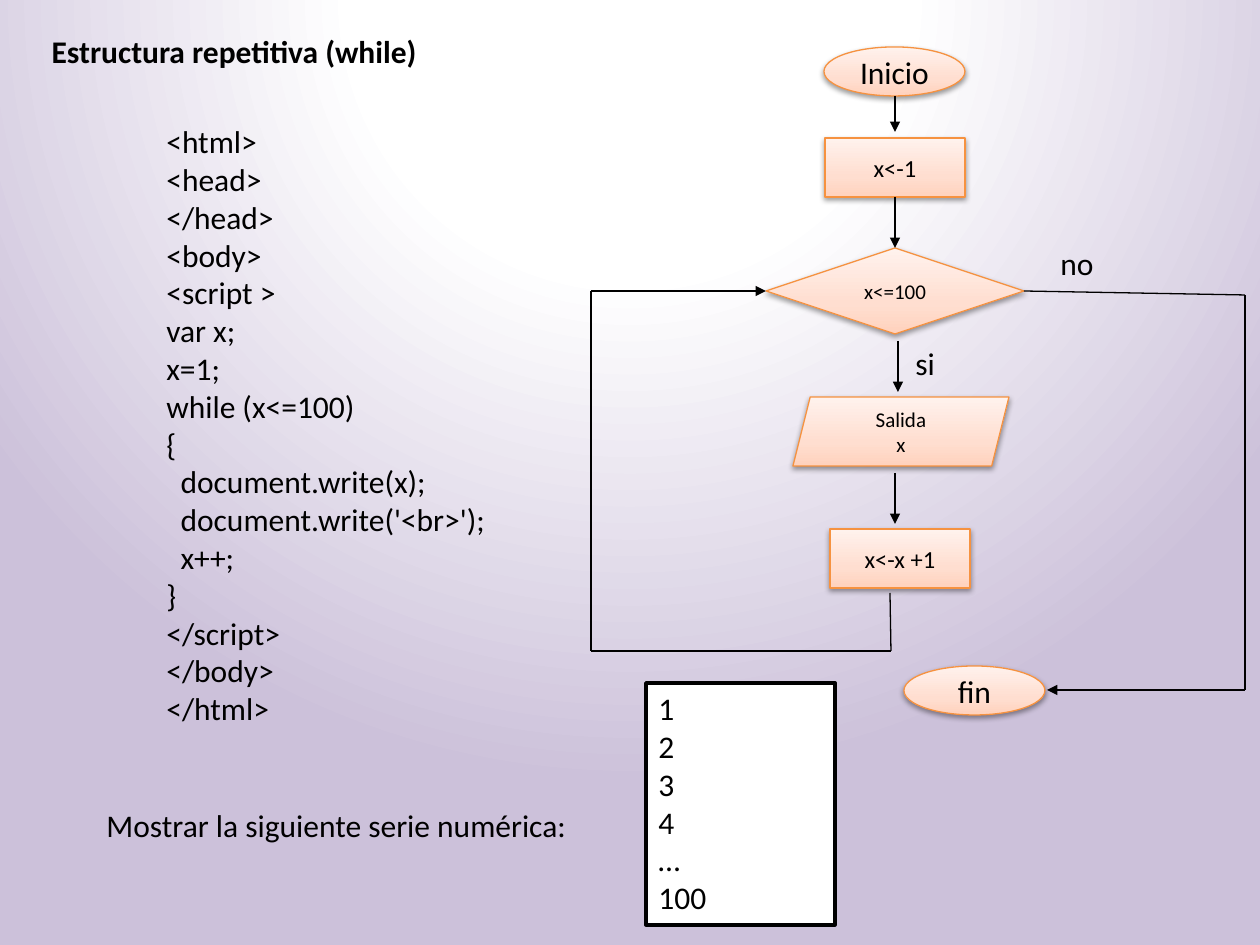
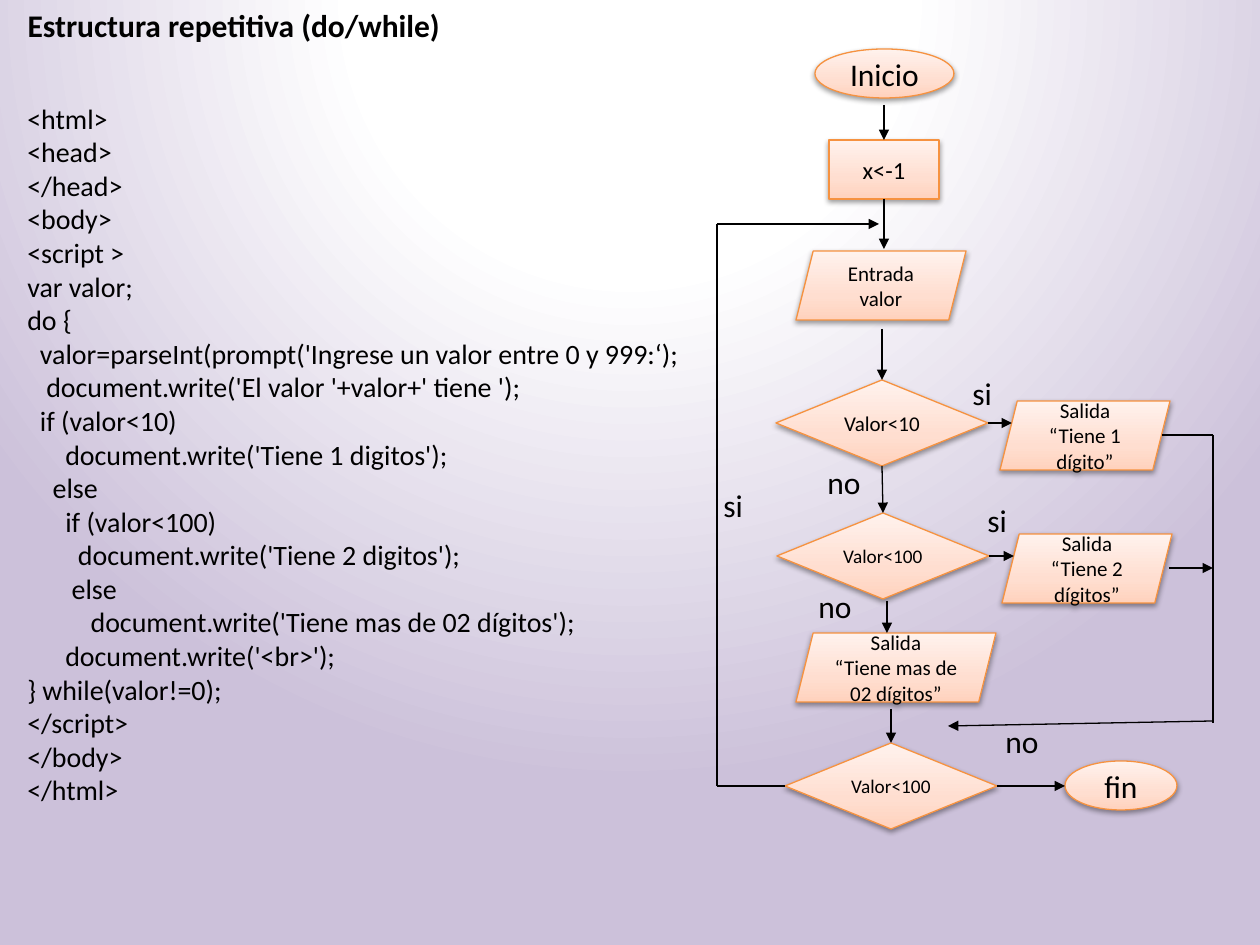
"""Build two slides that pair loop code with its flowchart."""
from pptx import Presentation
from pptx import util as u
from pptx.dml.color import RGBColor
from pptx.enum import shapes, text
from pptx.oxml import parse_xml
from pptx.oxml.ns import nsdecls, qn

SCALE = 914400 / 126
FONT = "Calibri"
BLACK, WHITE, ORANGE = "000000", "FFFFFF", "F69240"
PAGE_STOPS = [(0, WHITE), (35, WHITE), (100, "CCC1DA")]
NODE_STOPS = [(0, "FFD2BD"), (35, "FFDED0"), (100, "FFF2ED")]
PAGE_PATH = '<a:path path="circle"><a:fillToRect l="50000" t="-80000" r="50000" b="180000"/></a:path>'
NODE_ANGLE = '<a:lin ang="16200000" scaled="0"/>'
SPACE_WIDTH = 0.226
LABEL_WIDTHS = {"si": 52, "no": 72}
LABEL_HEIGHT = 50
TOP, LEFT, BOTTOM, RIGHT = range(4)

KINDS = {
    "terminal": shapes.MSO_SHAPE.OVAL,
    "process": shapes.MSO_SHAPE.RECTANGLE,
    "decision": shapes.MSO_SHAPE.DIAMOND,
    "data": shapes.MSO_SHAPE.PARALLELOGRAM,
}

WHILE_CODE = """<html>
<head>
</head>
<body>
<script >
var x;
x=1;
while (x<=100)
{
  document.write(x);
  document.write('<br>');
  x++;
}
</script>
</body>
</html>"""

DO_CODE = """<html>
<head>
</head>
<body>
<script >
var valor;
do {
  valor=parseInt(prompt('Ingrese un valor entre 0 y 999:‘);
   document.write('El valor '+valor+' tiene ');
  if (valor<10)
      document.write('Tiene 1 digitos');
    else
      if (valor<100)
        document.write('Tiene 2 digitos');
       else
          document.write('Tiene mas de 02 dígitos');
      document.write('<br>');
} while(valor!=0);
</script>
</body>
</html>"""

SLIDES = [
    {
        "title": ("Estructura repetitiva (while)", (39, 26, 394, 50)),
        "texts": [
            (WHILE_CODE, (154, 116, 745, 624), 18),
            ("Mostrar la siguiente serie numérica:", (94, 800, 496, 50), 18),
        ],
        "output": ("1\n2\n3\n4\n…\n100", (646, 683, 189, 242)),
        "nodes": {
            "start": ("terminal", (824, 47, 141, 49), 18, "Inicio"),
            "end": ("terminal", (904, 666, 141, 49), 18, "fin"),
            "set": ("process", (825, 138, 140, 59), 14, "x<-1"),
            "test": ("decision", (766, 248, 258, 86), 12, "x<=100"),
            "write": ("data", (793, 397, 216, 69), 12, "Salida\nx"),
            "add": ("process", (830, 529, 140, 59), 14, "x<-x +1"),
        },
        "arrows": [
            ((895, 96), (895, 132)),
            (("set", BOTTOM), ("test", TOP)),
            ((898, 341), (898, 392)),
            ((895, 473), (895, 524)),
            ((591, 291), ("test", LEFT)),
            ((1245, 690), (1047, 690)),
        ],
        "lines": [
            ((591, 651), (591, 291)),
            ((591, 651), (891, 651)),
            ((891, 651), (890, 593)),
            ((1245, 295), (1245, 690)),
            ((1245, 295), ("test", RIGHT)),
        ],
        "labels": [("si", 903, 338), ("no", 1048, 238)],
    },
    {
        "title": ("Estructura repetitiva (do/while)", (15, 0, 441, 50)),
        "texts": [(DO_CODE, (15, 95, 781, 726), 16)],
        "nodes": {
            "start": ("terminal", (815, 49, 139, 49), 18, "Inicio"),
            "end": ("terminal", (1065, 761, 112, 49), 18, "fin"),
            "set": ("process", (829, 140, 110, 59), 14, "x<-1"),
            "read": ("data", (796, 251, 170, 69), 12, "Entrada\nvalor"),
            "under 10": ("decision", (776, 380, 212, 86), 12, "Valor<10"),
            "one digit": ("data", (1000, 401, 170, 69), 12, "Salida\n“Tiene 1 dígito”"),
            "under 100": ("decision", (777, 513, 212, 86), 11, "Valor<100"),
            "two digits": ("data", (1002, 534, 170, 69), 12, "Salida\n“Tiene 2 dígitos”"),
            "more digits": ("data", (796, 633, 200, 69), 12, "Salida\n“Tiene mas de 02 dígitos”"),
            "repeat": ("decision", (785, 743, 212, 86), 11, "Valor<100"),
        },
        "arrows": [
            ((884, 105), ("set", TOP)),
            (("set", BOTTOM), (884, 249)),
            ((882, 329), ("under 10", TOP)),
            (("under 10", BOTTOM), ("under 100", TOP)),
            ((717, 224), (879, 224)),
            (("under 10", RIGHT), (1012, 423)),
            (("under 100", RIGHT), (1014, 556)),
            ((887, 601), (887, 633)),
            ((891, 709), ("repeat", TOP)),
            (("repeat", RIGHT), (1065, 786)),
            ((1213, 721), (948, 726)),
            ((1169, 568), (1213, 568)),
        ],
        "lines": [
            ((717, 786), (717, 224)),
            ((717, 786), ("repeat", LEFT)),
            ((1213, 435), (1213, 723)),
            ((1213, 435), (1162, 435)),
        ],
        "labels": [
            ("si", 960, 368), ("no", 806, 581), ("si", 975, 495),
            ("no", 815, 457), ("si", 711, 480), ("no", 993, 716),
        ],
    },
]


def px(*lengths):
    return [round(length * SCALE) for length in lengths]


def color(value):
    return RGBColor.from_string(value)


def apply(target, values):
    for name, value in values.items():
        setattr(target, name, value)


def paint_gradient(parent, stops, direction):
    marks = "".join(
        f'<a:gs pos="{place * 1000}"><a:srgbClr val="{value}"/></a:gs>' for place, value in stops
    )
    gradient = parse_xml(
        f'<a:gradFill {nsdecls("a")} rotWithShape="1"><a:gsLst>{marks}</a:gsLst>{direction}</a:gradFill>'
    )
    parent.replace(parent.find(qn("a:solidFill")), gradient)


def outline(line, value, points):
    line.color.rgb = color(value)
    line.width = u.Pt(points)


def write(shape, content, size, bold=False, align=text.PP_ALIGN.LEFT, **frame_format):
    frame = shape.text_frame
    lines = content.split("\n")
    frame.text = "\n".join(line.lstrip() for line in lines)
    apply(frame, {"word_wrap": True, **frame_format})
    for paragraph, line in zip(frame.paragraphs, lines):
        paragraph.alignment = align
        indent = len(line) - len(line.lstrip())
        if indent:
            margin = u.Pt(indent * size * SPACE_WIDTH)
            paragraph._p.get_or_add_pPr().set("marL", str(int(margin)))
        for run in paragraph.runs:
            apply(run.font, {"name": FONT, "size": u.Pt(size), "bold": bold})
            run.font.color.rgb = color(BLACK)


def add_title(slide, content, box):
    title = slide.shapes.title
    apply(title, dict(zip(("left", "top", "width", "height"), px(*box))))
    write(title, content, 18, bold=True, word_wrap=False,
          vertical_anchor=text.MSO_ANCHOR.TOP, auto_size=text.MSO_AUTO_SIZE.SHAPE_TO_FIT_TEXT)


def add_text(slide, content, box, size):
    write(slide.shapes.add_textbox(*px(*box)), content, size,
          auto_size=text.MSO_AUTO_SIZE.SHAPE_TO_FIT_TEXT)


def add_output(slide, content, box):
    shape = slide.shapes.add_shape(shapes.MSO_SHAPE.RECTANGLE, *px(*box))
    shape.shadow.inherit = False
    shape.fill.solid()
    shape.fill.fore_color.rgb = color(WHITE)
    outline(shape.line, BLACK, 2)
    write(shape, content, 18, vertical_anchor=text.MSO_ANCHOR.TOP)


def add_node(slide, kind, box, size, content):
    shape = slide.shapes.add_shape(KINDS[kind], *px(*box))
    shape.fill.solid()
    properties = shape.element.spPr
    paint_gradient(properties, NODE_STOPS, NODE_ANGLE)
    outline(shape.line, ORANGE, 0.75)
    shape.shadow.inherit = False
    properties.find(qn("a:effectLst")).append(parse_xml(
        f'<a:outerShdw {nsdecls("a")} blurRad="40000" dist="20000" dir="5400000" rotWithShape="0">'
        f'<a:srgbClr val="{BLACK}"><a:alpha val="38000"/></a:srgbClr></a:outerShdw>'
    ))
    write(shape, content, size, align=text.PP_ALIGN.CENTER, vertical_anchor=text.MSO_ANCHOR.MIDDLE)
    return shape


def add_line(slide, nodes, start, end, arrow):
    points = [(0, 0) if place[0] in nodes else place for place in (start, end)]
    connector = slide.shapes.add_connector(
        shapes.MSO_CONNECTOR.STRAIGHT, *px(*points[0], *points[1])
    )
    for place, join in ((start, connector.begin_connect), (end, connector.end_connect)):
        if place[0] in nodes:
            join(nodes[place[0]], place[1])
    outline(connector.line, BLACK, 0.75)
    properties = connector.element.spPr
    if arrow:
        properties.find(qn("a:ln")).append(parse_xml(f'<a:tailEnd {nsdecls("a")} type="triangle"/>'))
    properties.append(parse_xml(f'<a:effectLst {nsdecls("a")}/>'))


def build_slide(presentation, content):
    slide = presentation.slides.add_slide(presentation.slide_layouts[5])
    add_title(slide, *content["title"])
    for item in content["texts"]:
        add_text(slide, *item)
    nodes = {name: add_node(slide, *node) for name, node in content["nodes"].items()}
    for group in ("arrows", "lines"):
        for start, end in content[group]:
            add_line(slide, nodes, start, end, group == "arrows")
    for label, left, top in content["labels"]:
        add_text(slide, label, (left, top, LABEL_WIDTHS[label], LABEL_HEIGHT), 18)
    if "output" in content:
        add_output(slide, *content["output"])


def main():
    presentation = Presentation()
    apply(presentation, {"slide_width": u.Inches(10), "slide_height": u.Inches(7.5)})
    master = presentation.slide_master
    master.background.fill.solid()
    paint_gradient(master.element.find(".//" + qn("p:bgPr")), PAGE_STOPS, PAGE_PATH)
    for content in SLIDES:
        build_slide(presentation, content)
    presentation.save("out.pptx")


if __name__ == "__main__":
    main()
